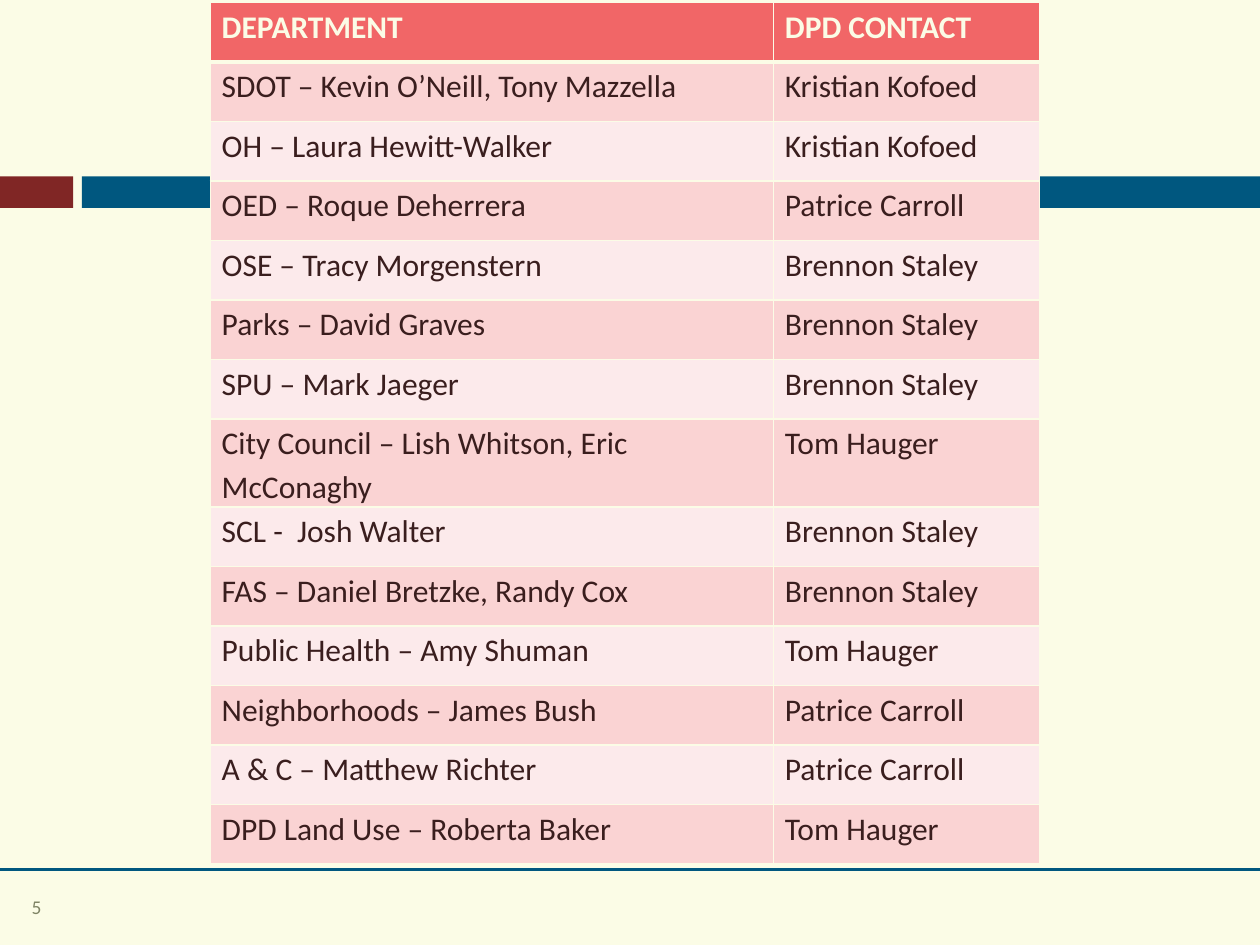
from lxml import etree
from pptx import Presentation
from pptx.dml.color import RGBColor
from pptx.enum.shapes import MSO_CONNECTOR, MSO_SHAPE
from pptx.enum.text import MSO_ANCHOR, PP_ALIGN
from pptx.oxml.ns import qn
from pptx.util import Inches, Pt

RECTANGLE = MSO_SHAPE.RECTANGLE
STRAIGHT = MSO_CONNECTOR.STRAIGHT
MIDDLE = MSO_ANCHOR.MIDDLE
CENTER = PP_ALIGN.CENTER

FONT = "Calibri"
COLORS = {
    "cream": "FBFCE6",
    "maroon": "802625",
    "blue": "00577F",
    "olive": "7F8465",
    "header": "F16667",
    "dark_band": "FAD3D3",
    "light_band": "FCEAEB",
    "text": "3A1E1E",
}

HEADINGS = ("DEPARTMENT", "DPD CONTACT")
CONTACTS = [
    ("SDOT – Kevin O’Neill, Tony Mazzella", "Kristian Kofoed"),
    ("OH – Laura Hewitt-Walker", "Kristian Kofoed"),
    ("OED – Roque Deherrera", "Patrice Carroll"),
    ("OSE – Tracy Morgenstern", "Brennon Staley"),
    ("Parks – David Graves", "Brennon Staley"),
    ("SPU – Mark Jaeger", "Brennon Staley"),
    ("City Council – Lish Whitson, Eric McConaghy", "Tom Hauger"),
    ("SCL -  Josh Walter", "Brennon Staley"),
    ("FAS – Daniel Bretzke, Randy Cox", "Brennon Staley"),
    ("Public Health – Amy Shuman", "Tom Hauger"),
    ("Neighborhoods – James Bush", "Patrice Carroll"),
    ("A & C – Matthew Richter", "Patrice Carroll"),
    ("DPD Land Use – Roberta Baker", "Tom Hauger"),
]
TALL_ROW = 7
TALL_HEIGHT = 0.7
COLUMN_WIDTHS = (4.47, 2.11)


def rgb(name):
    return RGBColor.from_string(COLORS[name])


def style_font(para, size, color, bold=False):
    for span in para.runs:
        span.font.name = FONT
        span.font.size = Pt(size)
        span.font.bold = bold
        span.font.color.rgb = rgb(color)


def add_bar(page, left, top, width, height, color):
    bar = page.shapes.add_shape(
        RECTANGLE, Inches(left), Inches(top), Inches(width), Inches(height))
    bar.shadow.inherit = False
    bar.fill.solid()
    bar.fill.fore_color.rgb = rgb(color)
    bar.line.fill.background()


def add_title_band(page, left, top, width, height):
    block, gap = 0.58, 0.07
    add_bar(page, left, top, block, height, "maroon")
    add_bar(page, left + block + gap, top, width - block - gap, height, "blue")


def add_footer(page, left, top, width, number):
    # Rule across the page
    rule = page.shapes.add_connector(
        STRAIGHT, Inches(left), Inches(top), Inches(left + width), Inches(top))
    rule.line.color.rgb = rgb("blue")
    rule.line.width = Pt(1.5)
    etree.SubElement(rule._element.spPr, qn("a:effectLst"))

    # Page number
    box = page.shapes.add_textbox(
        Inches(left), Inches(top + 0.16), Inches(0.58), Inches(0.27))
    frame = box.text_frame
    frame.word_wrap = True
    frame.vertical_anchor = MIDDLE
    frame.margin_left = frame.margin_right = 0
    frame.margin_top = frame.margin_bottom = 0
    frame.text = number
    para = frame.paragraphs[0]
    para.alignment = CENTER
    style_font(para, 11.1, "olive")


def add_borders(cell, above, below):
    properties = cell._tc.get_or_add_tcPr()
    for side, points in (("L", 1), ("R", 1), ("T", above), ("B", below)):
        line = etree.SubElement(properties, qn(f"a:ln{side}"), w=str(Pt(points)))
        fill = etree.SubElement(line, qn("a:solidFill"))
        etree.SubElement(fill, qn("a:srgbClr"), val=COLORS["cream"])


def fill_cell(cell, text, row):
    cell.margin_left = cell.margin_right = Inches(0.09)
    cell.margin_top = cell.margin_bottom = 0
    cell.text = text
    para = cell.text_frame.paragraphs[0]
    para.line_spacing = 1.15
    is_header = row == 0
    style_font(para, 18, "cream" if is_header else "text", is_header)

    # Borders come before the fill in the cell properties
    add_borders(cell, 3 if row == 1 else 1, 3 if is_header else 1)
    band = "header" if is_header else "dark_band" if row % 2 else "light_band"
    cell.fill.solid()
    cell.fill.fore_color.rgb = rgb(band)


def add_contact_table(page, left, top, width, height):
    rows = [HEADINGS] + CONTACTS
    table = page.shapes.add_table(
        len(rows), len(HEADINGS),
        Inches(left), Inches(top), Inches(width), Inches(height)).table
    for column, column_width in zip(table.columns, COLUMN_WIDTHS):
        column.width = Inches(column_width)

    row_height = (height - TALL_HEIGHT) / (len(rows) - 1)
    for row, texts in enumerate(rows):
        table.rows[row].height = Inches(
            TALL_HEIGHT if row == TALL_ROW else row_height)
        for column, text in enumerate(texts):
            fill_cell(table.cell(row, column), text, row)


def main():
    deck = Presentation()
    deck.slide_width = Inches(10)
    deck.slide_height = Inches(7.5)
    page = deck.slides.add_slide(deck.slide_layouts[6])
    page.background.fill.solid()
    page.background.fill.fore_color.rgb = rgb("cream")

    add_title_band(page, 0, 1.4, 10, 0.25)
    add_footer(page, 0, 6.9, 10, "5")
    add_contact_table(page, 1.67, 0.02, sum(COLUMN_WIDTHS), 6.84)
    deck.save("out.pptx")


if __name__ == "__main__":
    main()
